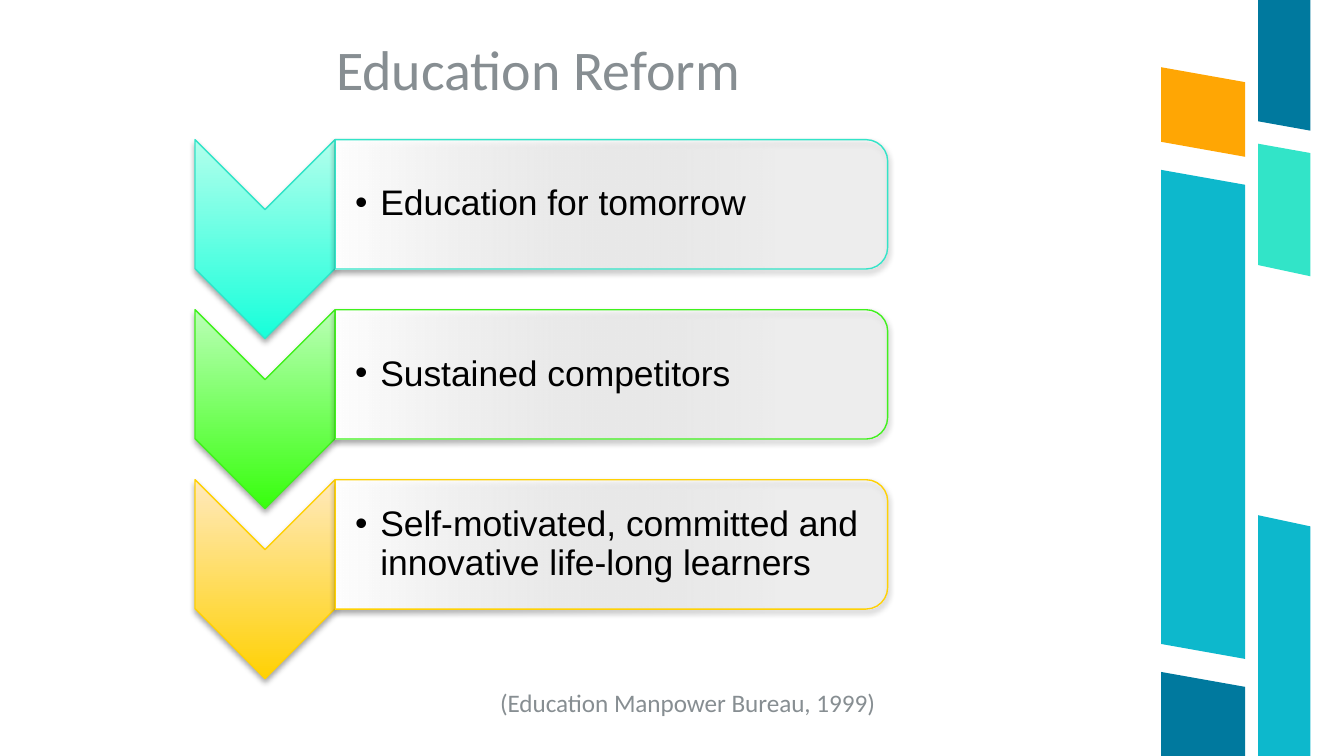
from dataclasses import dataclass

from lxml.etree import SubElement
from pptx import Presentation
from pptx.dml.color import RGBColor
from pptx.enum.shapes import MSO_SHAPE as Shp
from pptx.enum.text import MSO_ANCHOR as Anchor, MSO_AUTO_SIZE as Fit, PP_ALIGN as Align
from pptx.oxml.ns import qn
from pptx.util import Pt


@dataclass(frozen=True)
class Theme:
    teal: str = "0DB8CC"
    mint: str = "32E4C8"
    blue: str = "00799E"
    orange: str = "FFA604"
    grey: str = "878E92"
    black: str = "000000"
    white: str = "FFFFFF"
    title_size: float = 30
    goal_size: float = 19
    source_size: float = 13.5
    title_font: str = "Calibri"
    goal_font: str = "Arial"


@dataclass(frozen=True)
class Bar:
    left: float
    width: float
    top: float
    bottom: float
    color: str
    slant_top: bool = True
    slant_bottom: bool = True


@dataclass(frozen=True)
class Goal:
    text: str
    dark: str
    light: str
    line: str


@dataclass(frozen=True)
class Stop:
    pos: int
    color: str
    alpha: int = 100


@dataclass(frozen=True)
class Box:
    left: float
    top: float
    width: float
    height: float


THEME = Theme()
SLANT = 0.18
INNER = (622.1, 44.6)
OUTER = (673.9, 28.1)
BARS = [
    Bar(*OUTER, 276.5, 405, THEME.teal, slant_bottom=False),
    Bar(*OUTER, 77, 147.5, THEME.mint),
    Bar(*OUTER, 0, 69.8, THEME.blue, slant_top=False),
    Bar(*INNER, 36, 83.8, THEME.orange),
    Bar(*INNER, 360, 405, THEME.blue, slant_bottom=False),
    Bar(*INNER, 91.3, 352.8, THEME.teal),
]
GOALS = [
    Goal("Education for tomorrow", "17FFDA", "B2FFEC", THEME.mint),
    Goal("Sustained competitors", "37FF0D", "BAFFB6", "40F11C"),
    Goal("Self-motivated, committed and innovative life-long learners",
         "FFD104", "FFE9BD", "FFD104"),
]
GOAL_TOP = 74.8
GOAL_PITCH = 91.1


def rgb(color: str) -> RGBColor:
    return RGBColor.from_string(color)


def format_text(tf, font: str, size: float, color: str) -> None:
    for p in tf.paragraphs:
        for r in p.runs:
            r.font.name = font
            r.font.size = Pt(size)
            r.font.color.rgb = rgb(color)


def add_color(parent, color: str, alpha: int) -> None:
    clr = SubElement(parent, qn("a:srgbClr"), val=color)
    if alpha < 100:
        SubElement(clr, qn("a:alpha"), val=str(alpha * 1000))


def set_gradient(s, stops: list[Stop], angle: int, rotates: bool) -> None:
    s.fill.gradient()
    grad = s._element.spPr.find(qn("a:gradFill"))
    for child in list(grad):
        grad.remove(child)
    grad.set("rotWithShape", str(int(rotates)))
    gs_list = SubElement(grad, qn("a:gsLst"))
    for stop in stops:
        gs = SubElement(gs_list, qn("a:gs"), pos=str(stop.pos * 1000))
        add_color(gs, stop.color, stop.alpha)
    SubElement(grad, qn("a:lin"), ang=str(angle * 60000), scaled="0")


def set_shadow(s) -> None:
    s.shadow.inherit = False
    effects = s._element.spPr.find(qn("a:effectLst"))
    outer = SubElement(effects, qn("a:outerShdw"), blurRad=str(Pt(3.1)),
                       dist=str(Pt(1.8)), dir="5400000", rotWithShape="0")
    add_color(outer, THEME.black, 35)


def add_turned(shapes, kind: Shp, box: Box, line: str):
    shift = (box.width - box.height) / 2
    s = shapes.add_shape(kind, Pt(box.left + shift), Pt(box.top - shift),
                         Pt(box.height), Pt(box.width))
    s.rotation = 90
    s.line.color.rgb = rgb(line)
    s.line.width = Pt(0.75)
    set_shadow(s)
    return s


def add_textbox(shapes, box: Box, text: str):
    tf = shapes.add_textbox(Pt(box.left), Pt(box.top), Pt(box.width), Pt(box.height)).text_frame
    tf.text = text
    return tf


def add_bar(shapes, bar: Bar) -> None:
    drop = bar.width * SLANT
    right = bar.left + bar.width
    top_left, top_right = bar.top, bar.top + drop * bar.slant_top
    bottom_left, bottom_right = bar.bottom - drop * bar.slant_bottom, bar.bottom
    builder = shapes.build_freeform(bar.left, top_left, scale=Pt(1))
    builder.add_line_segments([(right, top_right), (right, bottom_right),
                               (bar.left, bottom_left)], close=True)
    s = builder.convert_to_shape()
    s.shadow.inherit = False
    s.fill.solid()
    s.fill.fore_color.rgb = rgb(bar.color)
    s.line.fill.background()


def add_goal(shapes, goal: Goal, top: float) -> None:
    chevron = add_turned(shapes, Shp.CHEVRON, Box(104.5, top, 75, 106.6), goal.line)
    set_gradient(chevron, [Stop(0, goal.dark), Stop(100, goal.light)], 270, False)
    panel = add_turned(shapes, Shp.ROUND_2_SAME_RECTANGLE, Box(179.6, top, 295.9, 69.3), goal.line)
    set_gradient(panel, [Stop(20, THEME.white, 27), Stop(100, THEME.white)], 90, True)

    tf = add_textbox(shapes, Box(179.5, top + 3.5, 292.3, 62.6), goal.text)
    tf.word_wrap = True
    tf.vertical_anchor = Anchor.MIDDLE
    tf.margin_left = Pt(10.8)
    tf.margin_top = tf.margin_right = tf.margin_bottom = Pt(0.9)
    p = tf.paragraphs[0]
    p.line_spacing = 0.9
    pPr = p._p.get_or_add_pPr()
    pPr.set("marL", str(Pt(13.5)))
    pPr.set("indent", str(-Pt(13.5)))
    add_color(SubElement(pPr, qn("a:buClr")), THEME.black, 100)
    SubElement(pPr, qn("a:buFont"), typeface=THEME.goal_font)
    SubElement(pPr, qn("a:buChar"), char="•")
    format_text(tf, THEME.goal_font, THEME.goal_size, THEME.black)


def add_title(s) -> None:
    s.left, s.top, s.width, s.height = Pt(172.8), Pt(15.1), Pt(408), Pt(44)
    tf = s.text_frame
    tf.text = "Education Reform"
    tf.vertical_anchor = Anchor.TOP
    tf.auto_size = Fit.NONE
    tf.paragraphs[0].alignment = Align.LEFT
    format_text(tf, THEME.title_font, THEME.title_size, THEME.grey)


def add_source(shapes) -> None:
    tf = add_textbox(shapes, Box(260.8, 364.5, 219.6, 23.7), "(Education Manpower Bureau, 1999)")
    tf.word_wrap = False
    format_text(tf, THEME.title_font, THEME.source_size, THEME.grey)


def main() -> None:
    prs = Presentation()
    prs.slide_width, prs.slide_height = Pt(720), Pt(405)
    slide = prs.slides.add_slide(prs.slide_layouts[5])
    shapes = slide.shapes
    for bar in BARS:
        add_bar(shapes, bar)
    for i, goal in enumerate(GOALS):
        add_goal(shapes, goal, GOAL_TOP + i * GOAL_PITCH)
    add_source(shapes)
    add_title(shapes.title)
    prs.save("out.pptx")


if __name__ == "__main__":
    main()
